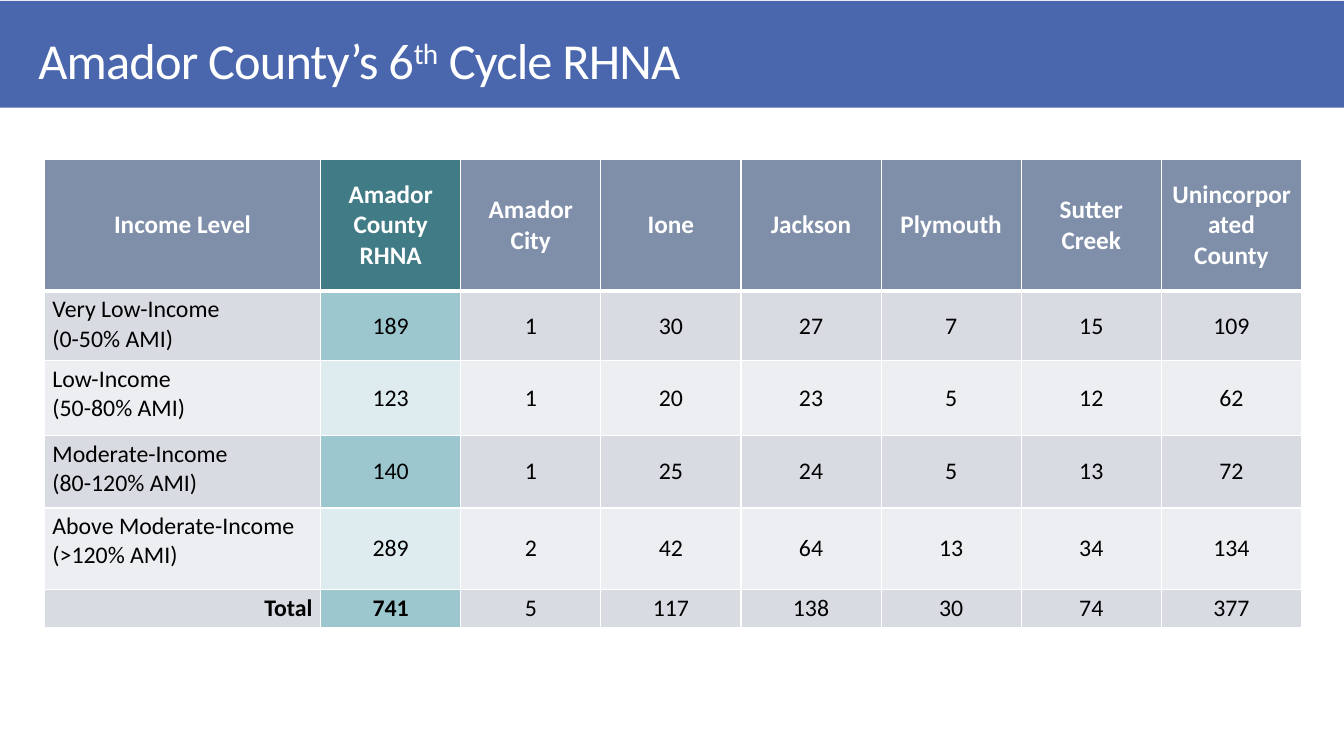
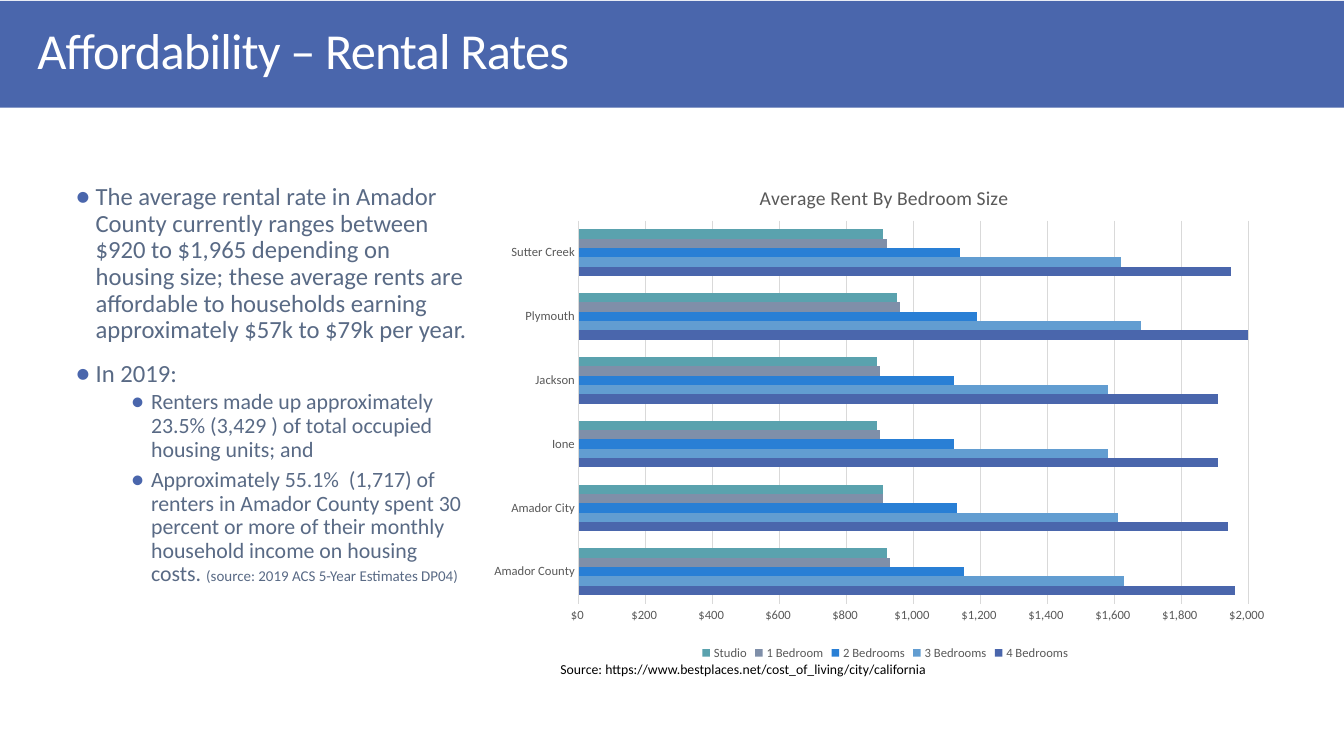
from lxml import etree
from pptx import Presentation
from pptx.chart.data import CategoryChartData
from pptx.dml.color import RGBColor
from pptx.enum.chart import XL_CHART_TYPE, XL_LEGEND_POSITION, XL_TICK_MARK
from pptx.enum.shapes import MSO_SHAPE
from pptx.enum.text import MSO_ANCHOR, PP_ALIGN
from pptx.oxml.ns import qn
from pptx.util import Inches, Pt

FONT = "Calibri"
COLORS = {key: RGBColor.from_string(value) for key, value in {
    "band": "4A66AC", "white": "FFFFFF", "black": "000000", "body": "596A85",
    "header": "7F8FA9", "county_header": "417B85",
    "row_dark": "D8DBE2", "row_light": "ECEEF1",
    "county_dark": "9CC7CE", "county_light": "DEECEF",
    "chart_text": "595959", "grid": "D9D9D9",
    "four": "4A66AC", "three": "629DD1", "two": "297FD5",
    "one": "7F8FA9", "studio": "5AA2AE",
}.items()}


def style(font, size, color, bold=False):
    font.name, font.size, font.bold = FONT, Pt(size), bold
    font.color.rgb = COLORS[color]


def place(element, index, **edges):
    """Give a chart element a manual layout, in fractions of the chart."""
    for old in element.findall(qn("c:layout")):
        element.remove(old)
    layout = etree.Element(qn("c:layout"))
    manual = etree.SubElement(layout, qn("c:manualLayout"))
    if "w" in edges:
        etree.SubElement(manual, qn("c:layoutTarget"), val="inner")
    for axis in "xy":
        etree.SubElement(manual, qn(f"c:{axis}Mode"), val="edge")
    for edge, value in edges.items():
        etree.SubElement(manual, qn(f"c:{edge}"), val=str(value))
    element.insert(index, layout)


prs = Presentation()
prs.slide_width, prs.slide_height = Inches(13.33), Inches(7.5)
title_only = prs.slide_layouts[5]

# Titles: (text, baseline) runs, left, top, height
titles = [
    ([("Amador County’s 6", None), ("th", "30000"), (" Cycle RHNA", None)], 0.28, 0.15, 0.95),
    ([("Affordability – Rental Rates", None)], 0.27, 0.07, 0.92),
]
slides = []
for runs, left, top, height in titles:
    slide = prs.slides.add_slide(title_only)
    slides.append(slide)
    title = slide.shapes.title
    title.left, title.top = Inches(left), Inches(top)
    title.width, title.height = Inches(12.8), Inches(height)
    title.text_frame.vertical_anchor = MSO_ANCHOR.MIDDLE
    heading = title.text_frame.paragraphs[0]
    heading.alignment = PP_ALIGN.LEFT
    heading.line_spacing = 0.9
    style(heading.font, 36, "white")
    for text, baseline in runs:
        run = heading.add_run()
        run.text = text
        props = run._r.get_or_add_rPr()
        props.set("spc", "-60")
        if baseline:
            props.set("baseline", baseline)
rhna_slide, rent_slide = slides

# The band belongs to the layout, behind every title
band = rhna_slide.shapes.add_shape(
    MSO_SHAPE.RECTANGLE, 0, Inches(0.01), prs.slide_width, Inches(1.06))
band.shadow.inherit = False
band.fill.solid()
band.fill.fore_color.rgb = COLORS["band"]
band.line.fill.background()
title_only.shapes.element.insert(2, band.element)

# Slide 1: housing allocation table
allocation = [
    ["Income Level", "Amador County RHNA", "Amador City", "Ione", "Jackson",
     "Plymouth", "Sutter Creek", "Unincorporated County"],
    ["Very Low-Income\n(0-50% AMI)", 189, 1, 30, 27, 7, 15, 109],
    ["Low-Income\n(50-80% AMI)", 123, 1, 20, 23, 5, 12, 62],
    ["Moderate-Income\n(80-120% AMI)", 140, 1, 25, 24, 5, 13, 72],
    ["Above Moderate-Income (>120% AMI)", 289, 2, 42, 64, 13, 34, 134],
    ["Total", 741, 5, 117, 138, 30, 74, 377],
]
row_heights = [1.31, 0.69, 0.74, 0.72, 0.81, 0.38]
column_widths = [2.74] + [1.39] * 7
total_row = len(allocation) - 1
table = rhna_slide.shapes.add_table(
    len(row_heights), len(column_widths), Inches(0.44), Inches(1.58),
    Inches(sum(column_widths)), Inches(sum(row_heights))).table
table.horz_banding = False
for column, width in zip(table.columns, column_widths):
    column.width = Inches(width)

for r, values in enumerate(allocation):
    table.rows[r].height = Inches(row_heights[r])
    for c, value in enumerate(values):
        cell = table.cell(r, c)
        cell.text = str(value)
        is_header, is_label, is_county = r == 0, c == 0, c == 1
        shade = "dark" if r % 2 else "light"
        if is_header:
            fill = "county_header" if is_county else "header"
        else:
            fill = f"county_{shade}" if is_county else f"row_{shade}"
        cell.fill.solid()
        cell.fill.fore_color.rgb = COLORS[fill]

        side, edge = (0.08, 0.04) if is_header or is_label else (0.07, 0)
        cell.margin_left = cell.margin_right = Inches(side)
        cell.margin_top = cell.margin_bottom = Inches(edge)
        row_label = is_label and not is_header
        cell.vertical_anchor = MSO_ANCHOR.TOP if row_label else MSO_ANCHOR.MIDDLE
        align = PP_ALIGN.CENTER
        if row_label:
            align = PP_ALIGN.RIGHT if r == total_row else PP_ALIGN.LEFT
        for paragraph in cell.text_frame.paragraphs:
            paragraph.alignment = align
            if is_header:
                style(paragraph.font, 18, "white", bold=True)
            else:
                style(paragraph.font, 17, "black", bold=r == total_row and c < 2)

        for i, border in enumerate(("lnL", "lnR", "lnT", "lnB")):
            thick = (r, border) in ((0, "lnB"), (1, "lnT"))
            line = etree.Element(qn(f"a:{border}"), w=str(Pt(3 if thick else 1)))
            paint = etree.SubElement(line, qn("a:solidFill"))
            etree.SubElement(paint, qn("a:srgbClr"), val=str(COLORS["white"]))
            cell._tc.get_or_add_tcPr().insert(i, line)

# Slide 2: findings
findings = [
    (0, ["The average rental rate in Amador County currently ranges between $920 to $1,965 "
         "depending on housing size; these average rents are affordable to households "
         "earning approximately $57k to $79k per year."]),
    (0, ["In 2019:"]),
    (1, ["Renters made up approximately 23.5% (3,429 ) of total occupied housing units; and"]),
    (1, ["Approximately 55.1%  (1,717) of renters in Amador County spent 30 percent or more "
         "of their monthly household income on housing costs. ",
         "(source: 2019 ACS 5-Year Estimates DP04)"]),
]
findings_frame = rent_slide.shapes.add_textbox(
    Inches(0.65), Inches(1.3), Inches(4.1), Inches(5.05)).text_frame
findings_frame.word_wrap = True
findings_frame.vertical_anchor = MSO_ANCHOR.MIDDLE
for i, (level, texts) in enumerate(findings):
    paragraph = findings_frame.paragraphs[0] if i == 0 else findings_frame.add_paragraph()
    paragraph.level = level
    paragraph.line_spacing = 0.9
    paragraph.space_before = Pt(0 if i == 0 else 2.5 if level else 12)
    paragraph.space_after = Pt(2.5 if level else 0)
    props = paragraph._p.get_or_add_pPr()
    props.set("marL", str(Inches(0.75 if level else 0.2)))
    props.set("indent", str(Inches(-0.2)))
    bullet_color = etree.SubElement(props, qn("a:buClr"))
    etree.SubElement(bullet_color, qn("a:srgbClr"), val=str(COLORS["band"]))
    etree.SubElement(props, qn("a:buSzPct"), val="125000")
    etree.SubElement(props, qn("a:buFont"), typeface=FONT)
    etree.SubElement(props, qn("a:buChar"), char="•")
    style(paragraph.font, 15.6 if level else 17.6, "body")
    for text in texts:
        run = paragraph.add_run()
        run.text = text
        if text.startswith("(source"):
            run.font.size = Pt(10.7)

source_frame = rent_slide.shapes.add_textbox(
    Inches(5.46), Inches(6.51), Inches(4.31), Inches(0.27)).text_frame
source_frame.word_wrap = True
source_frame.text = "Source: https://www.bestplaces.net/cost_of_living/city/california"
style(source_frame.paragraphs[0].font, 9.8, "black")

# Slide 2: rent chart
rents = [
    ("4 Bedrooms", "four", (1960, 1940, 1910, 1910, 2030, 1950)),
    ("3 Bedrooms", "three", (1630, 1610, 1580, 1580, 1680, 1620)),
    ("2 Bedrooms", "two", (1150, 1130, 1120, 1120, 1190, 1140)),
    ("1 Bedroom", "one", (930, 910, 900, 900, 960, 920)),
    ("Studio", "studio", (920, 910, 890, 890, 950, 910)),
]
rent_data = CategoryChartData()
rent_data.categories = ["Amador County", "Amador City", "Ione", "Jackson",
                        "Plymouth", "Sutter Creek"]
for name, _, values in rents:
    rent_data.add_series(name, values)
chart = rent_slide.shapes.add_chart(
    XL_CHART_TYPE.BAR_CLUSTERED, Inches(4.78), Inches(1.59), Inches(8), Inches(5),
    rent_data).chart
style(chart.font, 10, "black")

chart.has_title = True
chart_title = chart.chart_title
chart_title.text_frame.text = "Average Rent By Bedroom Size"
style(chart_title.text_frame.paragraphs[0].font, 14, "chart_text")
place(chart_title._element, 1, x=0.34, y=0.04)

chart.has_legend = True
chart.legend.position = XL_LEGEND_POSITION.BOTTOM
chart.legend.include_in_layout = False
style(chart.legend.font, 9, "chart_text")

bars = chart.plots[0]
bars.gap_width = 182
bars.vary_by_categories = False
for series, (_, color, _) in zip(bars.series, rents):
    series.format.fill.solid()
    series.format.fill.fore_color.rgb = COLORS[color]

towns, dollars = chart.category_axis, chart.value_axis
for axis in (towns, dollars):
    axis.major_tick_mark = axis.minor_tick_mark = XL_TICK_MARK.NONE
    style(axis.tick_labels.font, 9, "chart_text")
dollars.minimum_scale, dollars.maximum_scale, dollars.major_unit = 0, 2000, 200
dollars.tick_labels.number_format = '"$"#,##0_);\\("$"#,##0\\)'
dollars.tick_labels.number_format_is_linked = False
dollars.format.line.fill.background()
dollars.has_major_gridlines = True
for line in (towns.format.line, dollars.major_gridlines.format.line):
    line.color.rgb = COLORS["grid"]
    line.width = Pt(0.75)
place(chart._chartSpace.chart.plotArea, 0, x=0.12, y=0.12, w=0.83, h=0.76)

prs.save("out.pptx")
